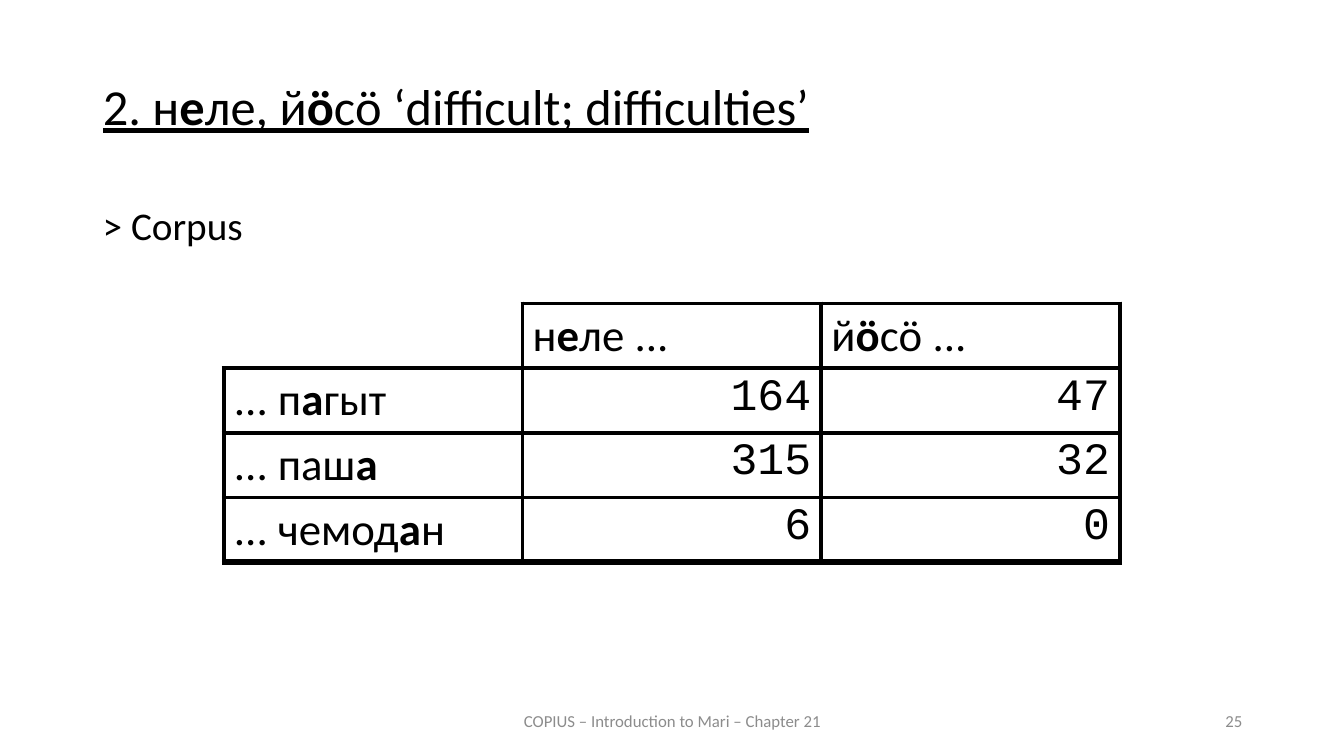
from dataclasses import dataclass

from lxml.etree import SubElement
from pptx import Presentation
from pptx.dml.color import RGBColor
from pptx.enum.text import MSO_ANCHOR as Anchor, MSO_AUTO_SIZE as AutoSize, PP_ALIGN as Align
from pptx.oxml.ns import qn
from pptx.slide import Slide
from pptx.table import _Cell as Cell
from pptx.text.text import TextFrame
from pptx.util import Inches, Pt


@dataclass(frozen=True)
class Theme:
    ink: str = "000000"
    muted: str = "8C8C8C"
    text_font: str = "Calibri"
    number_font: str = "Courier New"
    title_size: int = 36
    table_size: int = 32
    body_size: int = 28
    footer_size: int = 12
    thick: int = 3
    thin: int = 1


THEME = Theme()


@dataclass(frozen=True)
class TextStyle:
    size: int
    color: str = THEME.ink
    font: str = THEME.text_font
    align: Align = Align.LEFT
    underline: bool = False
    line_spacing: float = 1.0
    space_before: int = 0


@dataclass(frozen=True)
class TextBlock:
    text: str
    left: float
    top: float
    width: float
    height: float
    style: TextStyle
    anchor: Anchor = Anchor.TOP
    is_title: bool = False


@dataclass(frozen=True)
class TableLayer:
    texts: list[list[str]]
    style: TextStyle


TITLE = TextStyle(THEME.title_size, align=Align.JUSTIFY, underline=True,
                  line_spacing=0.9, space_before=12)
BODY = TextStyle(THEME.body_size, line_spacing=0.9, space_before=10)
FOOTER = TextStyle(THEME.footer_size, THEME.muted, align=Align.CENTER)
PAGE_NUMBER = TextStyle(THEME.footer_size, THEME.muted, align=Align.RIGHT)
LABEL = TextStyle(THEME.table_size)
NUMBER = TextStyle(THEME.table_size, font=THEME.number_font, align=Align.RIGHT)

BLOCKS = [
    TextBlock("2. н*е*ле, й*ӧ*сӧ ‘difficult; difficulties’",
              0.92, 0.76, 11.5, 0.83, TITLE, is_title=True),
    TextBlock("COPIUS – Introduction to Mari – Chapter 21",
              4.42, 6.95, 4.5, 0.4, FOOTER, Anchor.MIDDLE),
    TextBlock("25", 9.42, 6.95, 3, 0.4, PAGE_NUMBER, Anchor.MIDDLE),
    TextBlock("> Corpus", 0.92, 2, 2.02, 0.67, BODY),
]

TABLE_LAYERS = [
    TableLayer([
        ["", "н*е*ле ...", "й*ӧ*сӧ ..."],
        ["... п*а*гыт", "", ""],
        ["... паш*а*", "", ""],
        ["... чемод*а*н", "", ""],
    ], LABEL),
    TableLayer([
        ["", "", ""],
        ["", "164", "47"],
        ["", "315", "32"],
        ["", "6", "0"],
    ], NUMBER),
]
TABLE_WIDTH = 8.89
ROW_HEIGHT = 0.64
THIN_ROW_EDGE = 3


def write_text(frame: TextFrame, text: str, style: TextStyle) -> None:
    paragraph = frame.paragraphs[0]
    paragraph_format = {
        "alignment": style.align,
        "line_spacing": style.line_spacing,
        "space_before": Pt(style.space_before),
    }
    for name, value in paragraph_format.items():
        setattr(paragraph, name, value)
    for index, part in enumerate(text.split("*")):
        if not part:
            continue
        run = paragraph.add_run()
        run.text = part
        font_format = {
            "name": style.font,
            "size": Pt(style.size),
            "bold": index % 2 == 1,
            "underline": style.underline,
        }
        for name, value in font_format.items():
            setattr(run.font, name, value)
        run.font.color.rgb = RGBColor.from_string(style.color)


def add_text_block(slide: Slide, block: TextBlock) -> None:
    bounds = {
        "left": Inches(block.left),
        "top": Inches(block.top),
        "width": Inches(block.width),
        "height": Inches(block.height),
    }
    if block.is_title:
        shape = slide.shapes.title
        for name, value in bounds.items():
            setattr(shape, name, value)
    else:
        shape = slide.shapes.add_textbox(*bounds.values())
    frame_format = {
        "word_wrap": True,
        "auto_size": AutoSize.NONE,
        "vertical_anchor": block.anchor,
    }
    for name, value in frame_format.items():
        setattr(shape.text_frame, name, value)
    write_text(shape.text_frame, block.text, block.style)


def row_edge_width(edge: int) -> int:
    return THEME.thin if edge == THIN_ROW_EDGE else THEME.thick


def set_borders(cell: Cell, row: int, column: int) -> None:
    is_corner = row == column == 0
    widths = {
        "a:lnL": 0 if is_corner else THEME.thick,
        "a:lnR": THEME.thick,
        "a:lnT": 0 if is_corner else row_edge_width(row),
        "a:lnB": row_edge_width(row + 1),
    }
    properties = cell._tc.get_or_add_tcPr()
    for tag, width in widths.items():
        line = SubElement(properties, qn(tag), w=str(Pt(width)))
        if width:
            fill = SubElement(line, qn("a:solidFill"))
            SubElement(fill, qn("a:srgbClr"), val=THEME.ink)
        else:
            SubElement(line, qn("a:noFill"))


def add_table_layer(slide: Slide, layer: TableLayer) -> None:
    row_count, column_count = len(layer.texts), len(layer.texts[0])
    table = slide.shapes.add_table(
        row_count, column_count, Inches(2.22), Inches(3.01),
        Inches(TABLE_WIDTH), Inches(ROW_HEIGHT * row_count)).table
    for name, value in {"first_row": False, "horz_banding": False}.items():
        setattr(table, name, value)
    for row, texts in enumerate(layer.texts):
        for column, text in enumerate(texts):
            cell = table.cell(row, column)
            set_borders(cell, row, column)
            cell.fill.background()
            write_text(cell.text_frame, text, layer.style)


def main() -> None:
    presentation = Presentation()
    presentation.slide_width = Inches(13.33)
    presentation.slide_height = Inches(7.5)
    slide = presentation.slides.add_slide(
        presentation.slide_layouts.get_by_name("Title Only"))
    for block in BLOCKS:
        add_text_block(slide, block)
    for layer in TABLE_LAYERS:
        add_table_layer(slide, layer)
    presentation.save("out.pptx")


if __name__ == "__main__":
    main()
